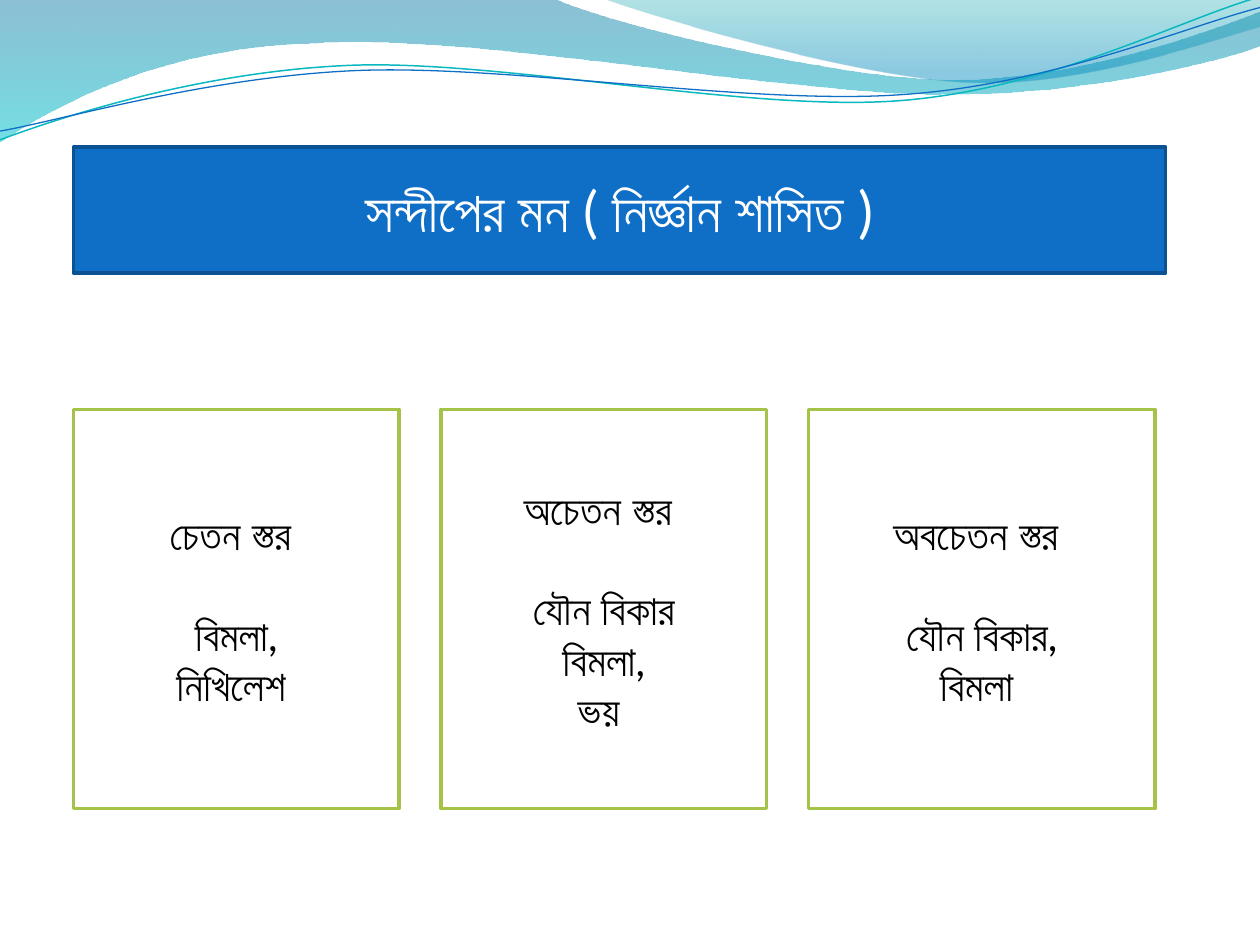
from lxml.etree import SubElement
from pptx import Presentation
from pptx.dml.color import RGBColor
from pptx.enum.shapes import MSO_SHAPE
from pptx.enum.text import MSO_ANCHOR, MSO_AUTO_SIZE, PP_ALIGN
from pptx.oxml.ns import qn
from pptx.util import Pt

WHITE = RGBColor(0xFF, 0xFF, 0xFF)
BLACK = RGBColor(0, 0, 0)
BLUE = RGBColor(0x0F, 0x6F, 0xC6)
DARK_BLUE = RGBColor(0x0B, 0x52, 0x92)
GREEN = RGBColor(0xA5, 0xC2, 0x49)
TEAL_LINE = RGBColor(0x0A, 0xB8, 0xBF)
DEEP_TEAL = RGBColor(0x00, 0x74, 0xA1)
CYAN = RGBColor(0x00, 0xC6, 0xCF)
SEA_GREEN = RGBColor(0x00, 0xA1, 0xA9)
SEA_BLUE = RGBColor(0x00, 0x8B, 0xBF)
FONT = "Lato"

# Outlines in points: one pair is a straight step, three pairs are a Bezier step
LEFT_WAVE = [
    [(0, 0)], [(316.8, -0.7)],
    [(342.7, 12.2), (478.1, 45.4), (545.8, 45.4)],
    [(614.2, 45.4), (689.8, 18.7), (720, 6.5)],
    [(720.7, 25.9)],
    [(707.8, 31.7), (626.4, 54.7), (537.1, 54)],
    [(447.8, 54), (275, 20.2), (185, 24.5)],
    [(92.9, 25.9), (33.1, 59.8), (-0.7, 81.4)],
    [(0, 0)],
]
RIGHT_WAVE = [
    [(344.9, -0.7)],
    [(366.5, 7.9), (491, 44.6), (553.7, 46.8)],
    [(616.3, 49.7), (691.9, 23), (720, 15.1)],
    [(720, 0)], [(344.9, -0.7)],
]
TEAL_STRAND = [
    [(0, 79.9)],
    [(34.6, 67), (113.8, 41), (199.4, 37.4)],
    [(284.4, 33.8), (427, 64.1), (513.4, 57.6)],
    [(599.8, 51.1), (675.4, 10.8), (718.6, -1.4)],
]
BLUE_STRAND = [
    [(0, 74.9)],
    [(33.8, 69.1), (118.1, 43.9), (203.8, 40.3)],
    [(290.2, 36.7), (429.8, 60.5), (516.2, 54)],
    [(601.9, 48.2), (677.5, 15.1), (720, 4.3)],
]

LEVELS = [  # heading, contents, width
    ("চেতন স্তর ", ["বিমলা,", "নিখিলেশ "], 186),
    ("অচেতন স্তর ", ["যৌন বিকার", "বিমলা,", "ভয" "় "], 186),
    ("অবচেতন স্তর ", ["যৌন বিকার,", "বিমলা "], 198),
]


def write(paragraph, text, size=24, color=BLACK, bold=False, before=0):
    paragraph.alignment = PP_ALIGN.CENTER
    paragraph.space_before = Pt(before)
    run = paragraph.add_run()
    run.text = text
    run.font.name = FONT
    run.font.size = Pt(size)
    run.font.bold = bold
    run.font.color.rgb = color


def style_box(box, fill, line):
    box.fill.solid()
    box.fill.fore_color.rgb = fill
    box.line.color.rgb = line
    box.line.width = Pt(2)
    box.text_frame.word_wrap = True
    box.text_frame.vertical_anchor = MSO_ANCHOR.MIDDLE


def add_outline(slide, outline, left, top, close):
    (start_x, start_y), *rest = [(Pt(left + x), Pt(top + y))
                                 for step in outline for x, y in step]
    builder = slide.shapes.build_freeform(start_x, start_y)
    builder.add_line_segments(rest, close=close)
    shape = builder.convert_to_shape()
    shape.shadow.inherit = False
    # Join each three straight steps that belong to one Bezier step
    segments = iter(list(shape._element.iter(qn("a:lnTo"))))
    for step in outline[1:]:
        first, *others = [next(segments) for _ in step]
        if others:
            first.tag = qn("a:cubicBezTo")
            for other in others:
                first.append(other[0])
                other.getparent().remove(other)
    return shape


def add_wave(slide, outline, left, top, stops):
    wave = add_outline(slide, outline, left, top, close=True)
    wave.line.fill.background()
    wave.fill.gradient()
    wave.fill.gradient_angle = 270
    for stop, (position, color, _) in zip(wave.fill.gradient_stops, stops):
        stop.position = position
        stop.color.rgb = color
    # Opacity of each gradient stop
    colors = wave._element.spPr.find(qn("a:gradFill")).iter(qn("a:srgbClr"))
    for color_element, (_, _, opacity) in zip(colors, stops):
        SubElement(color_element, qn("a:alpha"), val=str(opacity * 1000))


def add_strand(slide, outline, left, top, color, width):
    strand = add_outline(slide, outline, left, top, close=False)
    strand.fill.background()
    strand.line.color.rgb = color
    strand.line.width = Pt(width)


def add_header_waves(slide, left, top):
    add_wave(slide, LEFT_WAVE, left, top, [(0, DEEP_TEAL, 45), (1, CYAN, 55)])
    add_wave(slide, RIGHT_WAVE, left, top, [(0, SEA_GREEN, 30), (0.8, SEA_BLUE, 45)])
    add_strand(slide, TEAL_STRAND, left, top, TEAL_LINE, 0.85)
    add_strand(slide, BLUE_STRAND, left, top, BLUE, 0.75)


def add_banner(slide, left, top, width, height):
    banner = slide.shapes.title
    banner.left, banner.top = Pt(left), Pt(top)
    banner.width, banner.height = Pt(width), Pt(height)
    style_box(banner, BLUE, DARK_BLUE)
    banner.text_frame.auto_size = MSO_AUTO_SIZE.NONE
    write(banner.text_frame.paragraphs[0], "সন্দীপের মন ( নির্জ্ঞান শাসিত )",
          size=32, color=WHITE)


def add_levels(slide, left, top, height, gap):
    for heading, contents, width in LEVELS:
        level = slide.shapes.add_shape(MSO_SHAPE.RECTANGLE, Pt(left), Pt(top),
                                       Pt(width), Pt(height))
        level.shadow.inherit = False
        style_box(level, WHITE, GREEN)
        frame = level.text_frame
        write(frame.paragraphs[0], heading, bold=True)
        for i, content in enumerate(contents):
            write(frame.add_paragraph(), content, before=0 if i else 28.8)
        left += width + gap


def main():
    presentation = Presentation()
    presentation.slide_width, presentation.slide_height = Pt(720), Pt(540)
    slide = presentation.slides.add_slide(presentation.slide_layouts[5])
    add_header_waves(slide, left=0, top=0)
    add_banner(slide, left=42, top=84, width=624, height=72)
    add_levels(slide, left=42, top=234, height=228, gap=24)
    presentation.save("out.pptx")


if __name__ == "__main__":
    main()
